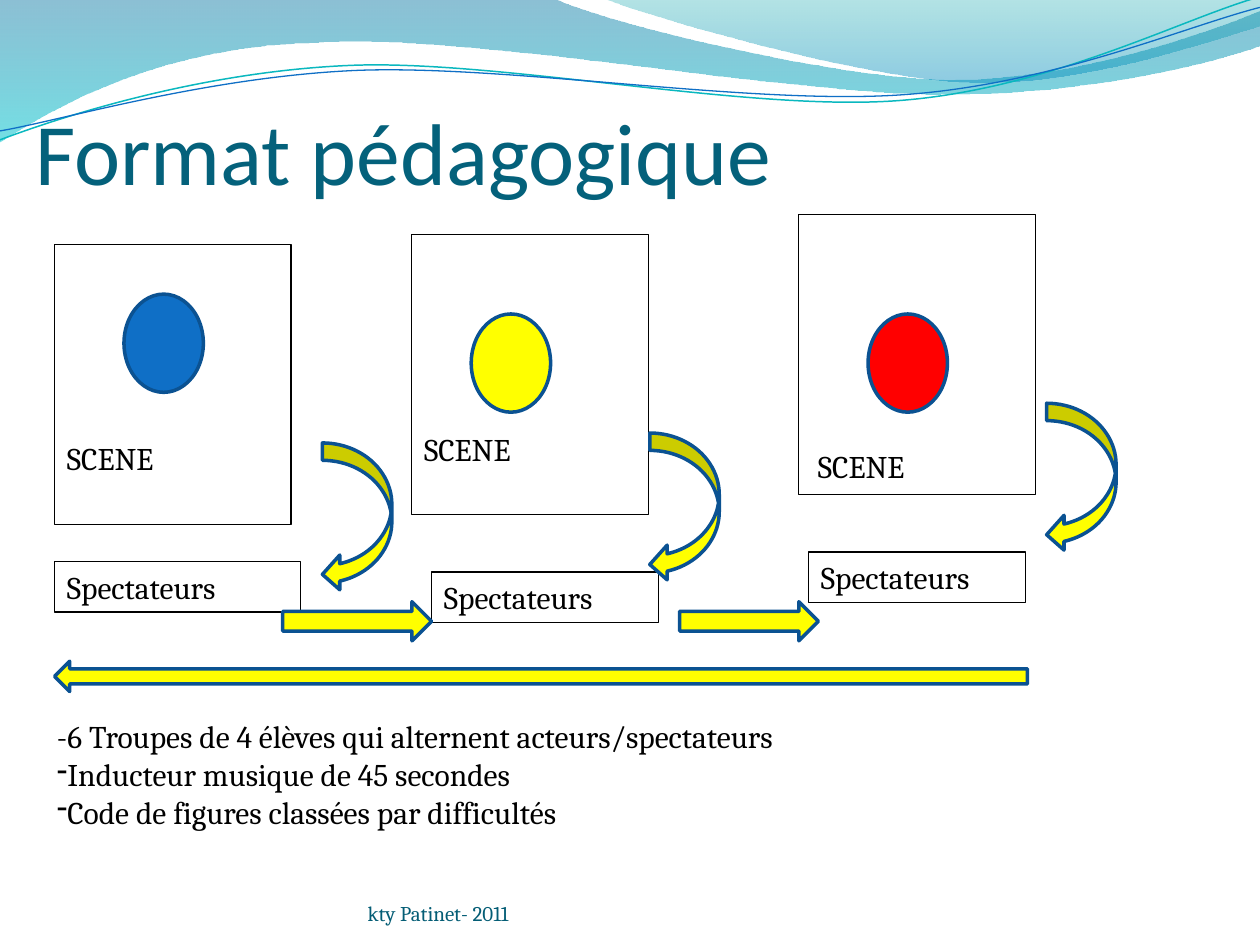
from pptx import Presentation
from pptx.dml.color import RGBColor
from pptx.enum.shapes import MSO_SHAPE
from pptx.enum.text import MSO_ANCHOR, PP_ALIGN
from pptx.oxml.ns import qn
from pptx.util import Cm, Pt
from lxml.etree import SubElement

COLORS = {
    "title": "04617B", "footer": "045D75", "text": "000000",
    "outline": "0B5292", "blue": "0F6FC6", "yellow": "FFFF00", "red": "FF0000",
    "teal": "0AB8BF", "deep": "0074A1", "cyan": "00C6CF",
    "green": "00A1A9", "azure": "008BBF",
}


def rgb(name):
    return RGBColor.from_string(COLORS[name])


def paint(sp, fill=None, line=None, width=2):
    sp.shadow.inherit = False
    if fill:
        sp.fill.solid()
        sp.fill.fore_color.rgb = rgb(fill)
    else:
        sp.fill.background()
    if line:
        sp.line.color.rgb = rgb(line)
        sp.line.width = Pt(width)
    else:
        sp.line.fill.background()


def write(sp, lines, size=18, font="Cambria", color="text", bulleted=(), **frame):
    tf = sp.text_frame
    settings = {"word_wrap": True, "vertical_anchor": MSO_ANCHOR.TOP, **frame}
    for name, value in settings.items():
        setattr(tf, name, value)
    for i, line in enumerate(lines):
        p = tf.paragraphs[0] if i == 0 else tf.add_paragraph()
        p.alignment = PP_ALIGN.LEFT
        r = p.add_run()
        r.text = line
        for name, value in {"size": Pt(size), "name": font}.items():
            setattr(r.font, name, value)
        r.font.color.rgb = rgb(color)
        if i in bulleted:
            pPr = p._p.get_or_add_pPr()
            SubElement(pPr, qn("a:buFontTx"))
            SubElement(pPr, qn("a:buChar")).set("char", "-")


def add_shape(s, kind, box, fill=None, line="outline", width=2):
    sp = s.shapes.add_shape(kind, *map(Cm, box))
    paint(sp, fill, line, width)
    return sp


def add_text(s, box, lines, **options):
    write(s.shapes.add_textbox(*map(Cm, box)), lines, **options)


def add_curve(s, box, start, segments, close):
    x, y = box
    pairs = [pair for seg in segments for pair in zip(seg[::2], seg[1::2])]
    points = [(Cm(x + px), Cm(y + py)) for px, py in [start, *pairs]]
    fb = s.shapes.build_freeform(*points[0])
    fb.add_line_segments(points[1:], close=close)
    sp = fb.convert_to_shape()
    steps = iter(sp._element.spPr.findall(".//" + qn("a:lnTo")))
    for seg in segments:
        step = next(steps)
        if len(seg) == 6:
            bend = step.makeelement(qn("a:cubicBezTo"))
            step.addprevious(bend)
            for corner in (step, next(steps), next(steps)):
                bend.append(corner[0])
                corner.getparent().remove(corner)
    return sp


def add_waves(s, box):
    bands = [
        ((0, 0), [(11.18, -0.02), (12.09, 0.43, 16.87, 1.6, 19.25, 1.6),
                  (21.67, 1.6, 24.33, 0.66, 25.4, 0.23), (25.43, 0.91),
                  (24.97, 1.12, 22.1, 1.93, 18.95, 1.9),
                  (15.8, 1.9, 9.7, 0.71, 6.53, 0.86),
                  (3.28, 0.91, 1.17, 2.11, -0.03, 2.87)],
         [("deep", 45), ("cyan", 55)]),
        ((12.17, -0.03), [(12.93, 0.28, 17.32, 1.57, 19.53, 1.65),
                          (21.74, 1.75, 24.41, 0.81, 25.4, 0.53), (25.4, 0)],
         [("green", 30), ("azure", 45)]),
    ]
    for start, segments, stops in bands:
        sp = add_curve(s, box, start, segments, True)
        paint(sp)
        sp.fill.gradient()
        sp.fill.gradient_angle = 270
        for i, (color, alpha) in enumerate(stops):
            stop = sp.fill.gradient_stops[i]
            stop.color.rgb = rgb(color)
            stop.position = i
            clr = sp._element.spPr.findall(".//" + qn("a:srgbClr"))[i]
            SubElement(clr, qn("a:alpha")).set("val", str(alpha * 1000))

    strands = [
        ((0, 2.82), [(1.22, 2.36, 4.01, 1.45, 7.04, 1.32),
                     (10.03, 1.19, 15.06, 2.26, 18.11, 2.03),
                     (21.16, 1.8, 23.83, 0.38, 25.35, -0.05)], "teal", 0.85),
        ((0, 2.64), [(1.19, 2.44, 4.17, 1.55, 7.19, 1.42),
                     (10.24, 1.3, 15.16, 2.13, 18.21, 1.91),
                     (21.23, 1.7, 23.9, 0.53, 25.4, 0.15)], "blue", 0.75),
    ]
    for start, segments, color, width in strands:
        paint(add_curve(s, box, start, segments, False), line=color, width=width)


def add_scene(s, box, color, disc, audience, arrow, label):
    x, y, w, h = box
    stage = add_shape(s, MSO_SHAPE.RECTANGLE, box, line="text", width=0.75)
    write(stage, ["SCENE"], margin_left=Cm(label[0]), margin_top=Cm(label[1]))
    seats = add_shape(s, MSO_SHAPE.RECTANGLE,
                      (x + audience[0], y + audience[1], audience[2], 1.02),
                      line="text", width=0.75)
    write(seats, ["Spectateurs"])
    add_shape(s, MSO_SHAPE.OVAL, (x + disc[0], y + disc[1], 1.6, 1.98), color)
    add_shape(s, MSO_SHAPE.CURVED_LEFT_ARROW,
              (x + arrow[0], y + arrow[1], 1.4, 3), "yellow")


def add_rotation(s, box):
    x, y = box
    for dx, dy, w, h, angle in [(4.6, 0, 3, 0.79, 0), (12.6, 0, 2.8, 0.79, 0),
                                (0, 1.2, 19.61, 0.61, 180)]:
        sp = add_shape(s, MSO_SHAPE.RIGHT_ARROW, (x + dx, y + dy, w, h), "yellow")
        sp.rotation = angle


def main():
    prs = Presentation()
    prs.slide_width, prs.slide_height = Cm(25.4), Cm(19.05)
    s = prs.slides.add_slide(prs.slide_layouts[6])
    add_waves(s, (0, 0))
    add_text(s, (0.71, 0.91, 22.86, 3.18), ["Format pédagogique"], size=50,
             font="Calibri", color="title", vertical_anchor=MSO_ANCHOR.BOTTOM,
             margin_left=0, margin_right=0, margin_bottom=0)
    scenes = [
        ((1.1, 4.93), "blue", (1.4, 1), (0, 6.39, 4.96), (5.4, 4), (0.25, 3.93)),
        ((8.3, 4.73), "yellow", (1.2, 1.6), (0.4, 6.8, 4.57), (4.8, 4), (0.25, 3.93)),
        ((16.1, 4.33), "red", (1.4, 2), (0.2, 6.8, 4.37), (5, 3.8), (0.39, 4.69)),
    ]
    for corner, *parts in scenes:
        add_scene(s, (*corner, 4.77, 5.64), *parts)
    add_rotation(s, (1.1, 12.13))
    add_text(s, (0.9, 14.33, 17.6, 3.33),
             ["-6 Troupes de 4 élèves qui alternent acteurs/spectateurs",
              "Inducteur musique de 45 secondes",
              "Code de figures classées par difficultés"], bulleted=(1, 2))
    add_text(s, (7.41, 17.65, 9.32, 1.02), ["kty Patinet- 2011"], size=12,
             color="footer", vertical_anchor=MSO_ANCHOR.BOTTOM, margin_left=0,
             margin_right=0, margin_top=0, margin_bottom=0)
    prs.save("out.pptx")


if __name__ == "__main__":
    main()
